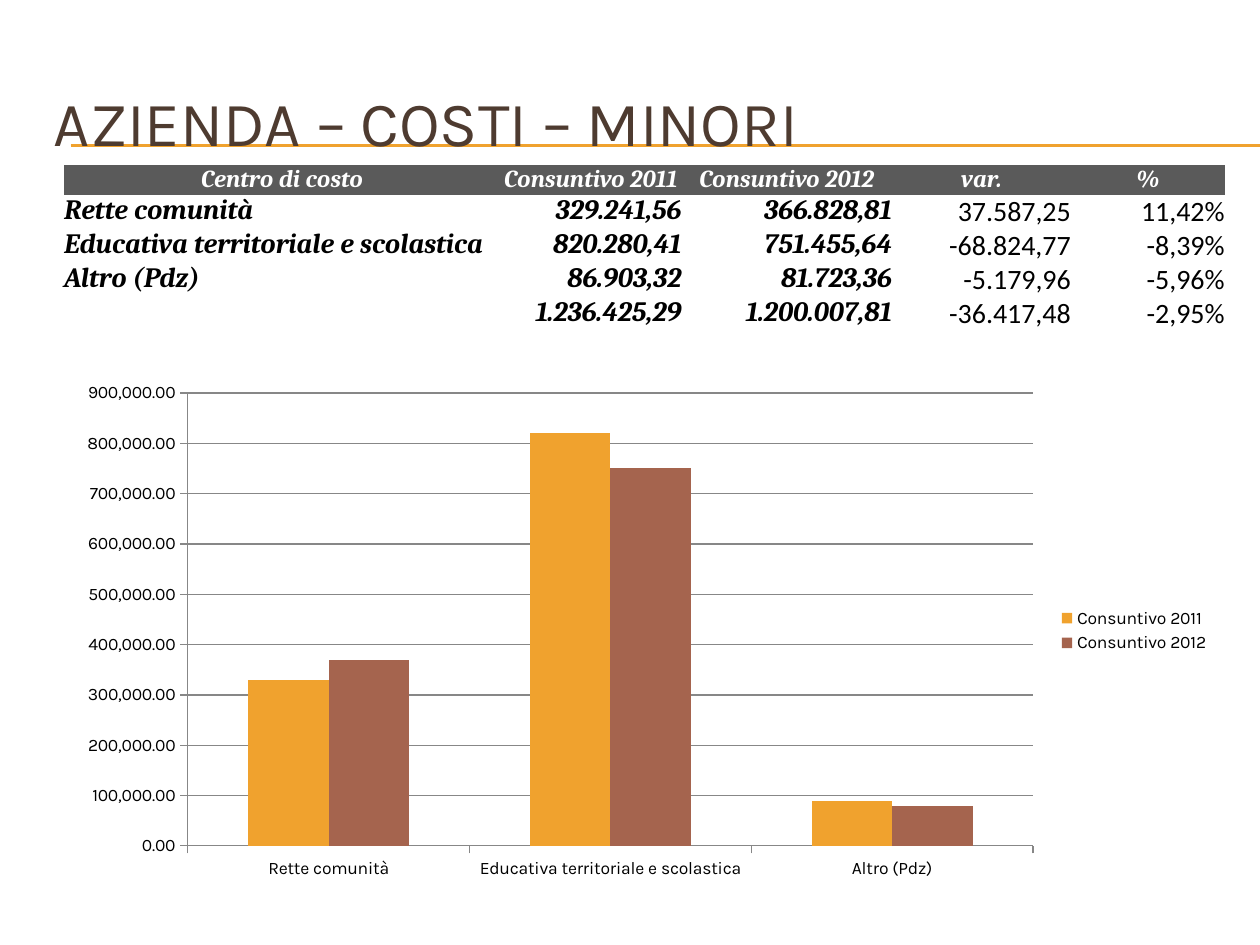
from lxml import etree
from pptx import Presentation
from pptx.chart.data import CategoryChartData
from pptx.dml.color import RGBColor
from pptx.enum import chart as charts, shapes, text
from pptx.oxml.ns import qn
from pptx.util import Inches, Pt

COLORS = {
    "title": "4E3B30",
    "header": "5A5A5A",
    "white": "FFFFFF",
    "black": "000000",
    "2011": "F0A22E",
    "2012": "A5644E",
    "axis": "878787",
}
NO_STYLE_NO_GRID = "{2D5ABB26-0587-4C30-8999-92F81FD0307C}"
HEADERS = ["Centro di costo", "Consuntivo 2011", "Consuntivo 2012", "var.", "%"]
ROWS = [
    ["Rette comunità", "329.241,56", "366.828,81", "37.587,25", "11,42%"],
    ["Educativa territoriale e scolastica", "820.280,41", "751.455,64", "-68.824,77", "-8,39%"],
    ["Altro (Pdz)", "86.903,32", "81.723,36", "-5.179,96", "-5,96%"],
    ["", "1.236.425,29", "1.200.007,81", "-36.417,48", "-2,95%"],
]
COLUMN_WIDTHS = [3.46, 1.44, 1.67, 1.42, 1.22]
ROW_HEIGHTS = [0.23] + [0.27] * len(ROWS)


def color(name):
    return RGBColor.from_string(COLORS[name])


def style_font(font, name, size, color_name, emphasis=False):
    font.name = name
    font.size = Pt(size)
    font.color.rgb = color(color_name)
    font.bold = font.italic = emphasis


def to_chart_value(italian):
    """Read an Italian-formatted amount, rounded to ten thousands."""
    return round(float(italian.replace(".", "").replace(",", ".")), -4)


def add_rule(slide, y):
    line = slide.shapes.add_connector(
        shapes.MSO_CONNECTOR.STRAIGHT, Inches(0.56), Inches(y), Inches(10), Inches(y))
    line.line.color.rgb = color("2011")
    line.line.width = Pt(0.75)
    etree.SubElement(line._element.spPr, qn("a:effectLst"))


def add_title(slide, title):
    box = slide.shapes.add_textbox(Inches(0.33), Inches(0.5), Inches(9.5), Inches(0.92))
    frame = box.text_frame
    frame.word_wrap = True
    frame.vertical_anchor = text.MSO_ANCHOR.MIDDLE
    frame.text = title
    style_font(frame.paragraphs[0].runs[0].font, "Karla", 36, "title")


def fill_cell(cell, content, alignment, font_name, size, color_name, emphasis):
    cell.margin_left = cell.margin_right = cell.margin_top = cell.margin_bottom = 0
    cell.text_frame.text = content
    paragraph = cell.text_frame.paragraphs[0]
    paragraph.alignment = alignment
    for run in paragraph.runs:
        style_font(run.font, font_name, size, color_name, emphasis)
    if not content:
        # An empty cell would otherwise stretch its row to 18 pt
        etree.SubElement(paragraph._p, qn("a:endParaRPr"), sz=str(size * 100))


def add_cost_table(slide):
    table = slide.shapes.add_table(
        len(ROW_HEIGHTS), len(HEADERS), Inches(0.51), Inches(1.31),
        Inches(sum(COLUMN_WIDTHS)), Inches(sum(ROW_HEIGHTS))).table
    table._tbl.tblPr.find(qn("a:tableStyleId")).text = NO_STYLE_NO_GRID
    table.first_row = table.horz_banding = False
    for column, width in zip(table.columns, COLUMN_WIDTHS):
        column.width = Inches(width)
    for row, height in zip(table.rows, ROW_HEIGHTS):
        row.height = Inches(height)

    for column, header in enumerate(HEADERS):
        cell = table.cell(0, column)
        cell.fill.solid()
        cell.fill.fore_color.rgb = color("header")
        fill_cell(cell, header, text.PP_ALIGN.CENTER, "Cambria", 14, "white", True)

    for row, values in enumerate(ROWS, start=1):
        for column, value in enumerate(values):
            cell = table.cell(row, column)
            cell.fill.background()
            alignment = text.PP_ALIGN.RIGHT if column else text.PP_ALIGN.LEFT
            is_variation = column >= 3
            font_name = "Calibri" if is_variation else "Cambria"
            fill_cell(cell, value, alignment, font_name, 16, "black", not is_variation)
            if is_variation:
                cell.vertical_anchor = text.MSO_ANCHOR.BOTTOM


def add_cost_chart(slide):
    centres = ROWS[:-1]
    data = CategoryChartData(number_format="#,##0.00")
    data.categories = [row[0] for row in centres]
    for column in (1, 2):
        data.add_series(HEADERS[column], [to_chart_value(row[column]) for row in centres])
    chart = slide.shapes.add_chart(
        charts.XL_CHART_TYPE.COLUMN_CLUSTERED,
        Inches(0.51), Inches(2.96), Inches(9.19), Inches(4.09), data).chart
    style_font(chart.font, "Karla", 10, "black")
    chart.has_title = False
    chart.has_legend = True
    chart.legend.position = charts.XL_LEGEND_POSITION.RIGHT
    chart.legend.include_in_layout = False

    plot = chart.plots[0]
    plot.vary_by_categories = False
    plot.gap_width = 150
    plot.overlap = 0
    for series, year in zip(plot.series, ("2011", "2012")):
        series.format.fill.solid()
        series.format.fill.fore_color.rgb = color(year)

    value_axis = chart.value_axis
    value_axis.minimum_scale = 0
    value_axis.maximum_scale = 900000
    value_axis.major_unit = 100000
    value_axis.has_major_gridlines = True
    value_axis.tick_labels.number_format = "#,##0.00"
    value_axis.tick_labels.number_format_is_linked = False
    for part in (value_axis, value_axis.major_gridlines, chart.category_axis):
        part.format.line.color.rgb = color("axis")
        part.format.line.width = Pt(0.75)


def main():
    presentation = Presentation()
    presentation.slide_width = Inches(10)
    presentation.slide_height = Inches(7.5)
    slide = presentation.slides.add_slide(presentation.slide_layouts[6])
    for y in (1.15, 1.16):
        add_rule(slide, y)
    add_title(slide, "AZIENDA – COSTI – MINORI")
    add_cost_table(slide)
    add_cost_chart(slide)
    presentation.save("out.pptx")


if __name__ == "__main__":
    main()
